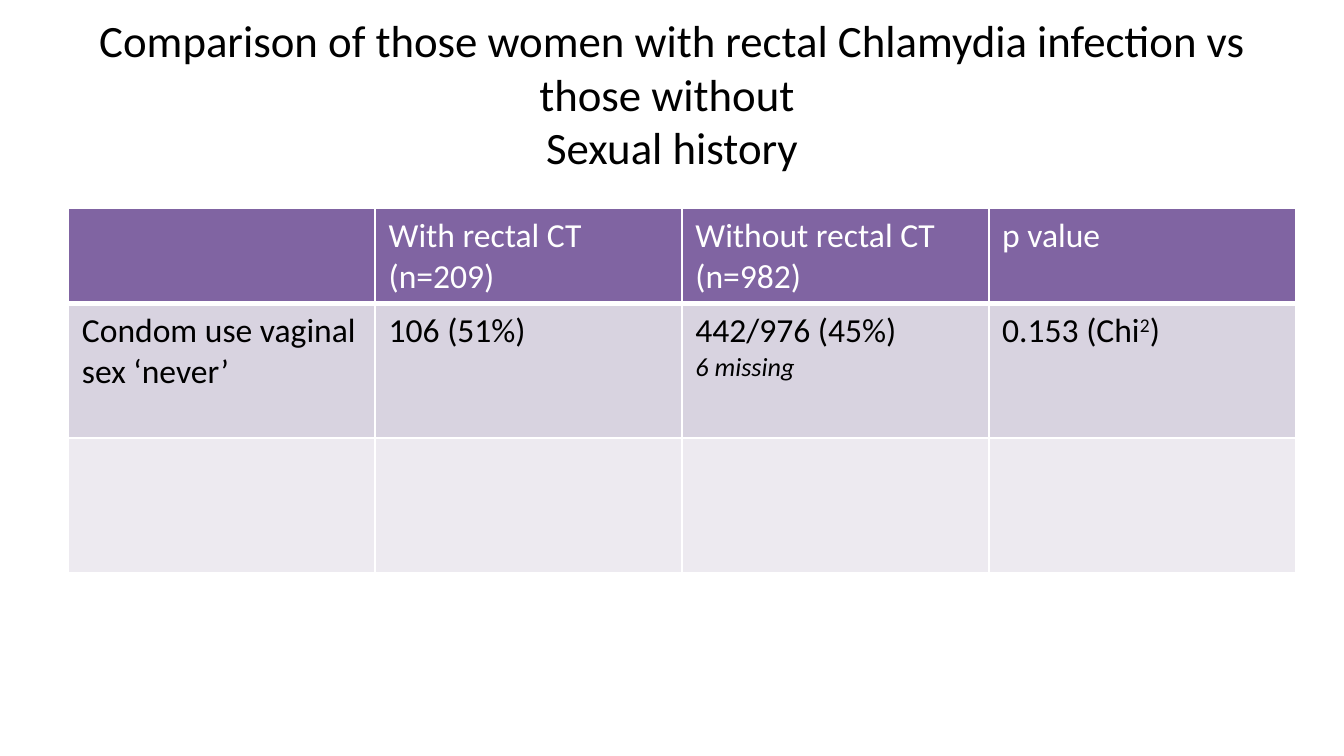
import dataclasses
import typing

import lxml.etree
import pptx
import pptx.dml.color
import pptx.enum.text
import pptx.oxml.ns
import pptx.util

WIDE = pptx.util.Inches(10)
HIGH = WIDE * 9 // 16
FONT = "Calibri"
COLORS = {
    "ink": "000000",
    "paper": "FFFFFF",
    "head": "8064A2",
    "odd": "D8D3E0",
    "even": "EDEAF0",
}


@dataclasses.dataclass(frozen=True)
class Part:
    text: str
    size: int = 18
    slant: bool = False
    raised: bool = False


@dataclasses.dataclass(frozen=True)
class Band:
    height: float
    fill: str
    ink: str
    cells: tuple[tuple[tuple[Part, ...], ...], ...]
    rule: int = 1


def line(text: str, size: int = 18, slant: bool = False) -> tuple[Part, ...]:
    return (Part(text, size, slant),)


BLANK = (line(""),)
TITLE = (
    "Comparison of those women with rectal Chlamydia infection vs "
    "those without \vSexual history"
)
BANDS = (
    Band(0.7, "head", "paper", (
        BLANK,
        (line("With rectal CT (n=209)"),),
        (line("Without rectal CT (n=982)"),),
        (line("p value"),),
    ), rule=3),
    Band(1, "odd", "ink", (
        (line("Condom use vaginal sex ‘never’"),),
        (line("106 (51%)"),),
        (line("442/976 (45%)"), line("6 missing", 14, True)),
        ((Part("0.153 (Chi"), Part("2", raised=True), Part(")")),),
    )),
    Band(1, "even", "ink", (BLANK,) * 4),
)


def tint(name: str) -> pptx.dml.color.RGBColor:
    return pptx.dml.color.RGBColor.from_string(COLORS[name])


def style(font: typing.Any, size: int, ink: str, slant: bool = False) -> None:
    font.name = FONT
    font.size = pptx.util.Pt(size)
    font.bold = False
    font.italic = slant
    font.color.rgb = tint(ink)


def edge(cell: typing.Any, side: str, width: int) -> None:
    qn = pptx.oxml.ns.qn
    props = cell._tc.get_or_add_tcPr()
    rule = lxml.etree.SubElement(props, qn(f"a:ln{side}"), w=str(pptx.util.Pt(width)))
    fill = lxml.etree.SubElement(rule, qn("a:solidFill"))
    lxml.etree.SubElement(fill, qn("a:srgbClr"), val=COLORS["paper"])


def write(cell: typing.Any, paras: tuple[tuple[Part, ...], ...], ink: str) -> None:
    frame = cell.text_frame
    frame.text = "\n".join(parts[0].text for parts in paras)
    for para, parts in zip(frame.paragraphs, paras):
        for part in parts[1:]:
            para.add_run().text = part.text
        for run, part in zip(para.runs, parts):
            style(run.font, part.size, ink, part.slant)
            if part.raised:
                run._r.get_or_add_rPr().set("baseline", "30000")


def head(slide: typing.Any) -> None:
    title = slide.shapes.title
    title.left, title.top = int(WIDE * 0.05), int(HIGH * 0.04)
    title.width, title.height = int(WIDE * 0.9), int(HIGH / 6)
    frame = title.text_frame
    frame.text = TITLE
    frame.word_wrap = True
    frame.auto_size = pptx.enum.text.MSO_AUTO_SIZE.NONE
    frame.vertical_anchor = pptx.enum.text.MSO_ANCHOR.MIDDLE
    para = frame.paragraphs[0]
    para.alignment = pptx.enum.text.PP_ALIGN.CENTER
    for run in para.runs:
        style(run.font, 24, "ink")


def grid(slide: typing.Any, bands: tuple[Band, ...]) -> None:
    tall = pptx.util.Inches(sum(band.height for band in bands))
    left, top = pptx.util.Inches(0.51), pptx.util.Inches(1.55)
    wide = pptx.util.Inches(9.13)
    table = slide.shapes.add_table(
        len(bands), len(bands[0].cells), left, top, wide, tall
    ).table
    for row, band in enumerate(bands):
        table.rows[row].height = pptx.util.Inches(band.height)
        for col, paras in enumerate(band.cells):
            cell = table.cell(row, col)
            write(cell, paras, band.ink)
            for side, width in zip("LRTB", (1, 1, 1, band.rule)):
                edge(cell, side, width)
            cell.fill.solid()
            cell.fill.fore_color.rgb = tint(band.fill)


def main() -> None:
    deck = pptx.Presentation()
    deck.slide_width, deck.slide_height = WIDE, HIGH
    slide = deck.slides.add_slide(deck.slide_layouts[5])
    head(slide)
    grid(slide, BANDS)
    deck.save("out.pptx")


if __name__ == "__main__":
    main()
